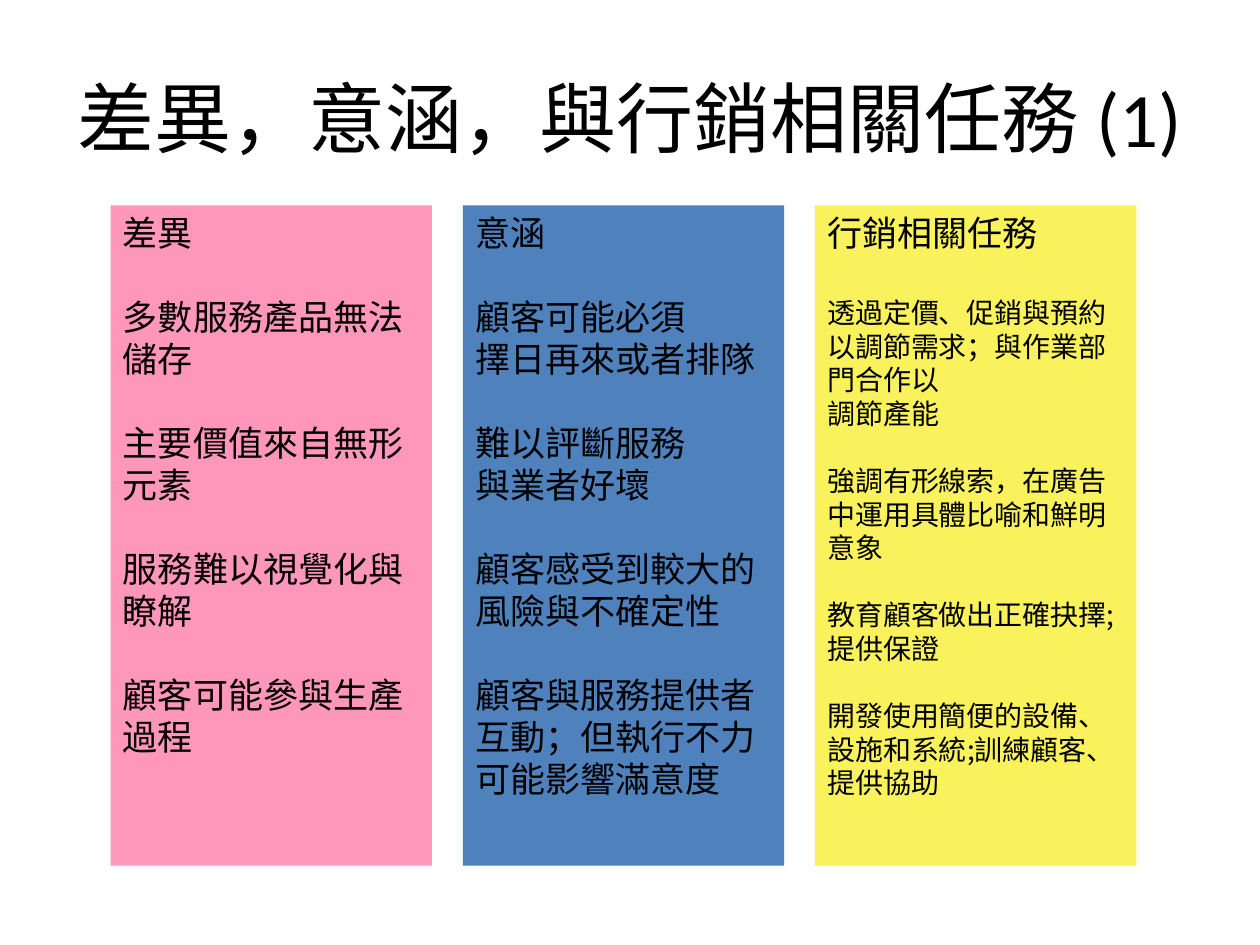
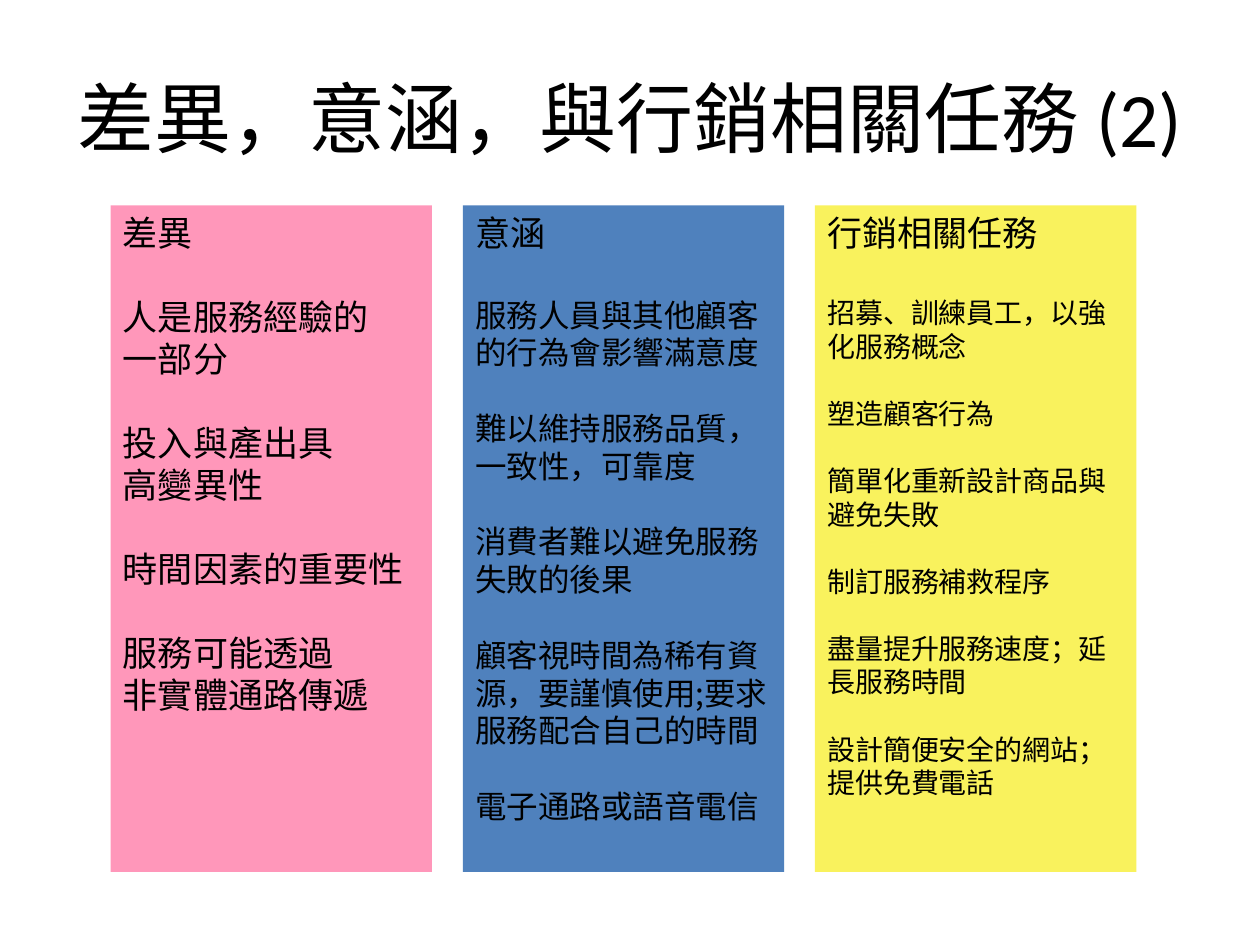
from pptx import Presentation
from pptx.dml.color import RGBColor
from pptx.enum.shapes import MSO_SHAPE as SHAPE
from pptx.enum.text import MSO_ANCHOR as ANCHOR, MSO_AUTO_SIZE as AUTO, PP_ALIGN as ALIGN
from pptx.util import Cm, Pt

COLORS = {"text": "000000", "difference": "FF97BA",
          "implication": "4F81BD", "task": "F9F25D"}
TITLE_FONT, BODY_FONT = "Calibri", "Noto Sans CJK SC"
TITLE = "差異，意涵，與行銷相關任務 ({})"
# Column heading and fill, from left to right
COLUMNS = [("差異", "difference"), ("意涵", "implication"), ("行銷相關任務", "task")]
LEFT, TOP, WIDTH, PITCH = 2.23, 4.14, 6.48, 7.1
HEAD_SIZE, LINE = 20, 1.2

# Per slide: column height, then (text size, items) for each column
SLIDES = [
    (13.31, [
        (20, ["多數服務產品無法儲存", "主要價值來自無形元素",
              "服務難以視覺化與瞭解", "顧客可能參與生產過程"]),
        (20, ["顧客可能必須\n擇日再來或者排隊", "難以評斷服務\n與業者好壞",
              "顧客感受到較大的\n風險與不確定性",
              "顧客與服務提供者\n互動；但執行不力可能影響滿意度"]),
        (16, ["透過定價、促銷與預約以調節需求；與作業部門合作以\n調節產能",
              "強調有形線索，在廣告中運用具體比喻和鮮明意象",
              "教育顧客做出正確抉擇;提供保證",
              "開發使用簡便的設備、設施和系統;訓練顧客、提供協助"]),
    ]),
    (13.44, [
        (20, ["人是服務經驗的\n一部分", "投入與產出具\n高變異性",
              "時間因素的重要性", "服務可能透過\n非實體通路傳遞"]),
        (18, ["服務人員與其他顧客的行為會影響滿意度",
              "難以維持服務品質，一致性，可靠度",
              "消費者難以避免服務失敗的後果",
              "顧客視時間為稀有資源，要謹慎使用;要求服務配合自己的時間",
              "電子通路或語音電信"]),
        (16, ["招募、訓練員工，以強\n化服務概念", "塑造顧客行為",
              "簡單化重新設計商品與\n避免失敗", "制訂服務補救程序",
              "盡量提升服務速度；延長服務時間",
              "設計簡便安全的網站；提供免費電話"]),
    ]),
]


def rgb(name):
    """Return a palette colour."""
    return RGBColor.from_string(COLORS[name])


def style(p, size, font, align):
    """Set font, size, colour and alignment of a paragraph."""
    p.alignment = align
    p.font.name, p.font.size = font, Pt(size)
    p.font.color.rgb = rgb("text")


def add_title(s, text):
    """Fill and format the title placeholder."""
    sp = s.shapes.title
    sp.left, sp.top, sp.width, sp.height = Cm(1.27), Cm(0.76), Cm(22.86), Cm(3.18)
    tf = sp.text_frame
    tf.text = text
    tf.auto_size, tf.vertical_anchor = AUTO.NONE, ANCHOR.MIDDLE
    style(tf.paragraphs[0], 44, TITLE_FONT, ALIGN.CENTER)


def add_line(p, text, size, gap=0):
    """Write one body line with a gap above it, in points."""
    p.text = text
    style(p, size, BODY_FONT, ALIGN.LEFT)
    p.space_before = Pt(gap)


def add_column(s, index, height, size, items):
    """Draw a coloured column with its heading and spaced items."""
    heading, color = COLUMNS[index]
    sp = s.shapes.add_shape(SHAPE.RECTANGLE, Cm(LEFT + index * PITCH), Cm(TOP),
                            Cm(WIDTH), Cm(height))
    sp.shadow.inherit = False
    sp.fill.solid()
    sp.fill.fore_color.rgb = rgb(color)
    sp.line.fill.background()
    tf = sp.text_frame
    tf.word_wrap, tf.vertical_anchor = True, ANCHOR.TOP
    add_line(tf.paragraphs[0], heading, HEAD_SIZE)
    gap = HEAD_SIZE * LINE
    for item in items:
        for text in item.split("\n"):
            add_line(tf.add_paragraph(), text, size, gap)
            gap = 0
        gap = size * LINE


def main():
    """Build and save the slides."""
    prs = Presentation()
    prs.slide_width, prs.slide_height = Cm(25.4), Cm(19.05)
    for number, (height, columns) in enumerate(SLIDES, 1):
        s = prs.slides.add_slide(prs.slide_layouts[5])
        add_title(s, TITLE.format(number))
        for index, (size, items) in enumerate(columns):
            add_column(s, index, height, size, items)
    prs.save("out.pptx")


main()
